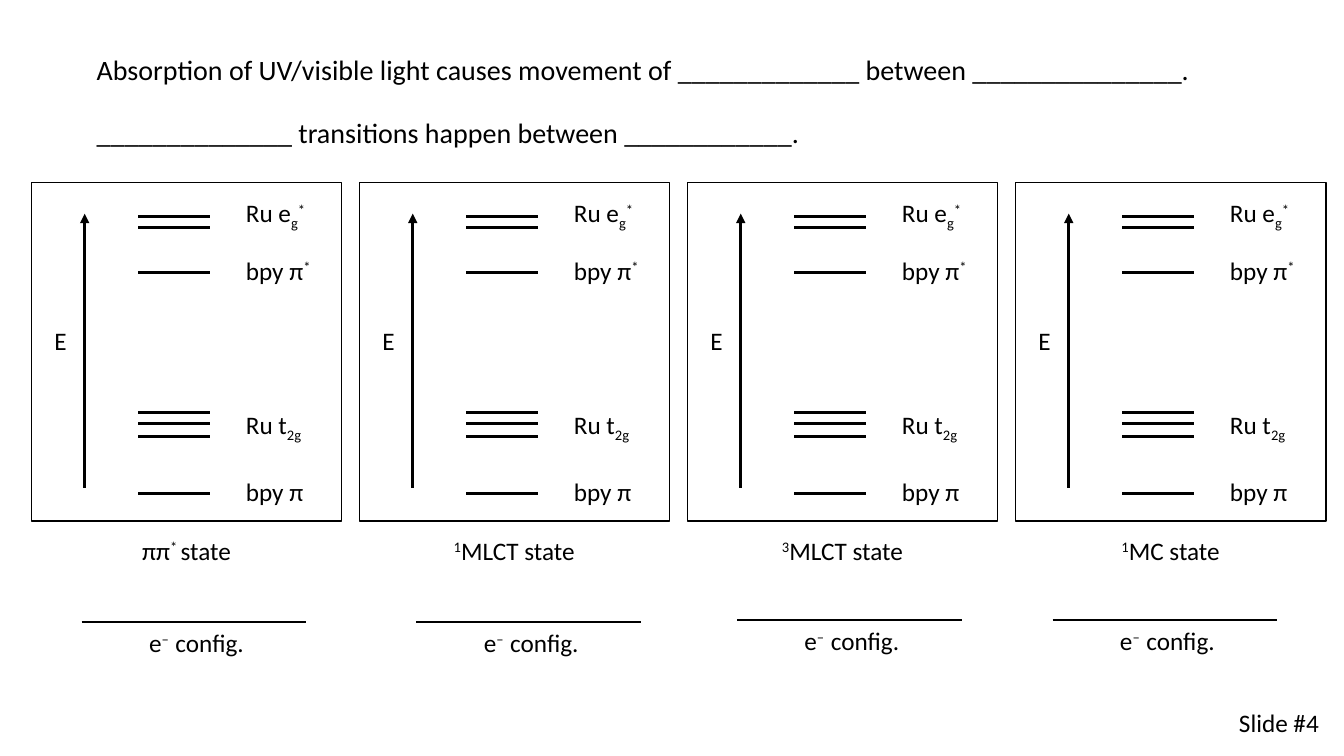
from lxml.etree import SubElement
from pptx import Presentation
from pptx.dml.color import RGBColor
from pptx.enum.shapes import MSO_CONNECTOR as CONN, MSO_SHAPE as SHAPE
from pptx.enum.text import MSO_AUTO_SIZE as FIT, PP_ALIGN as ALIGN
from pptx.oxml.ns import qn
from pptx.util import Inches, Pt

COLORS = {"ink": "000000"}
FONT = "Calibri"
SUP, SUB = 30, -25

SENTENCES = [
    ("Absorption of UV/visible light causes movement of _____________ between _______________.", 0.47, 11.54),
    ("______________ transitions happen between ____________.", 1.1, 7.38),
]
LEVELS = [4.33, 4.2, 4.09, 2.26, 2.15, 2.7, 4.9]
ORBITALS = [
    (2.48, [("bpy π", 0), ("*", SUP)]),
    (1.91, [("Ru e", 0), ("g", SUB), ("*", SUP)]),
    (4.01, [("Ru t", 0), ("2g", SUB)]),
    (4.68, [("bpy π", 0)]),
]
STATES = [
    ([("ππ", 0), ("* ", SUP), ("state", 0)], 1.22, 1.26, 0.81, 6.17),
    ([("1", SUP), ("MLCT state", 0)], 4.25, 1.7, 4.13, 6.17),
    ([("3", SUP), ("MLCT state", 0)], 7.64, 1.43, 7.31, 6.15),
    ([("1", SUP), ("MC state", 0)], 11.01, 1.2, 10.44, 6.15),
]
CONFIG = [("e", 0), ("–  ", SUP), ("config.", 0)]

FIRST_PANEL, LAST_PANEL = 0.31, 10.07
PITCH = (LAST_PANEL - FIRST_PANEL) / (len(STATES) - 1)
PANEL_TOP, PANEL_W, PANEL_H = 1.81, 3.08, 3.36
TEXT_H = 0.4


def ink():
    return RGBColor.from_string(COLORS["ink"])


def add_text(shapes, runs, x, y, w, h=TEXT_H, size=18, align=ALIGN.LEFT, wrap=True):
    tf = shapes.add_textbox(Inches(x), Inches(y), Inches(w), Inches(h)).text_frame
    tf.word_wrap = wrap
    tf.auto_size = FIT.SHAPE_TO_FIT_TEXT
    p = tf.paragraphs[0]
    p.alignment = align
    for text, baseline in runs:
        r = p.add_run()
        r.text = text
        r.font.name = FONT
        r.font.size = Pt(size)
        r.font.color.rgb = ink()
        if baseline:
            r.font._element.set("baseline", str(baseline * 1000))


def add_line(shapes, x1, y1, x2, y2, width, arrow=False):
    line = shapes.add_connector(CONN.STRAIGHT, Inches(x1), Inches(y1), Inches(x2), Inches(y2))
    line.line.width = Pt(width)
    line.line.color.rgb = ink()
    if arrow:
        SubElement(line.line._get_or_add_ln(), qn("a:tailEnd"), type="triangle")
    SubElement(line._element.spPr, qn("a:effectLst"))


def add_panel(s, x):
    shapes = s.shapes.add_group_shape().shapes
    for y in LEVELS:
        add_line(shapes, x + 1.06, y, x + 1.77, y, 2.25)
    for y, runs in ORBITALS:
        add_text(shapes, runs, x + 2.03, y, 0.92, 0.38)
    add_line(shapes, x + 0.53, 4.84, x + 0.53, 2.12, 2.25, arrow=True)
    add_text(shapes, [("E", 0)], x + 0.13, 3.18, 0.37, 0.38)
    sp = shapes.add_shape(SHAPE.RECTANGLE, Inches(x), Inches(PANEL_TOP), Inches(PANEL_W), Inches(PANEL_H))
    sp.shadow.inherit = False
    sp.fill.background()
    sp.line.color.rgb = ink()
    sp.line.width = Pt(1)


def main():
    prs = Presentation()
    prs.slide_width, prs.slide_height = Inches(13.33), Inches(7.5)
    s = prs.slides.add_slide(prs.slide_layouts[6])
    for text, y, w in SENTENCES:
        add_text(s.shapes, [(text, 0)], 0.86, y, w, 0.44, size=20)
    for i, (name, x, w, blank_x, blank_y) in enumerate(STATES):
        add_panel(s, FIRST_PANEL + i * PITCH)
        add_text(s.shapes, name, x, 5.26, w, align=ALIGN.CENTER, wrap=False)
        add_text(s.shapes, CONFIG, blank_x + 0.57, blank_y, 1.26)
        add_line(s.shapes, blank_x, blank_y, blank_x + 2.23, blank_y, 1.5)
    add_text(s.shapes, [("Slide #4", 0)], 12.19, 6.97, 1.14)
    prs.save("out.pptx")


if __name__ == "__main__":
    main()
